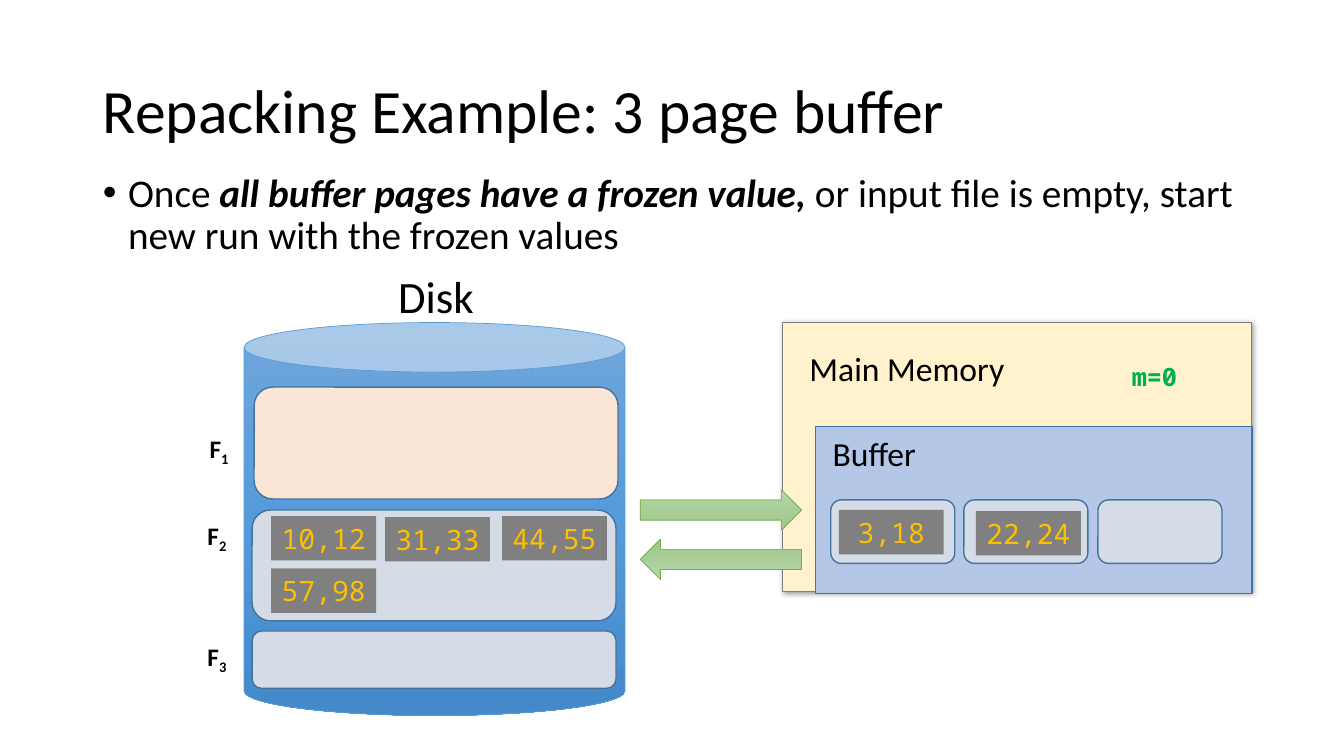
import pptx
import pptx.dml.color
import pptx.enum.shapes
import pptx.enum.text
import pptx.oxml
import pptx.oxml.ns
import pptx.util
from lxml import etree

SHAPE = pptx.enum.shapes.MSO_SHAPE
ALIGN = pptx.enum.text.PP_ALIGN
ANCHOR = pptx.enum.text.MSO_ANCHOR
qn = pptx.oxml.ns.qn


class Deck:
    """Holds the slide style and draws each kind of element in px (100 to the inch)."""

    PX = 9144
    TEXT, MONO = "Calibri", "Noto Sans Mono"
    COLORS = {
        "text": "000000", "page": "D6DCE5", "output": "FBE5D6",
        "edge": "43739E", "memory": "FFF2CC", "memory_edge": "808080",
        "buffer": "B4C7E7", "tile": "808080", "value": "FFC000",
        "counter": "00B050", "disk_edge": "5B9BD5", "arrow_edge": "70AD47",
    }
    DISK = ("71A6DB", "559BDB", "448ACA")
    ARROW = ("B5D5A7", "AACE9A", "9CC987")

    def __init__(self, width, height):
        self.prs = pptx.Presentation()
        self.prs.slide_width, self.prs.slide_height = width * self.PX, height * self.PX
        self.slide = self.prs.slides.add_slide(self.prs.slide_layouts[1])

    def color(self, name):
        return pptx.dml.color.RGBColor.from_string(self.COLORS[name])

    def box(self, *lengths):
        return [n * self.PX for n in lengths]

    def run(self, p, text, size, font=TEXT, color="text", bold=False, italic=False, sub=False):
        r = p.add_run()
        r.text = text
        r.font.size, r.font.name = pptx.util.Pt(size), font
        r.font.bold, r.font.italic = bold, italic
        r.font.color.rgb = self.color(color)
        if sub:
            r._r.get_or_add_rPr().set("baseline", "-25000")

    def placeholder(self, index, at, anchor):
        sp = self.slide.placeholders[index]
        sp.left, sp.top, sp.width, sp.height = self.box(*at)
        tf = sp.text_frame
        tf.auto_size = pptx.enum.text.MSO_AUTO_SIZE.NONE
        tf.vertical_anchor = anchor
        p = tf.paragraphs[0]
        p.alignment, p.line_spacing = ALIGN.LEFT, 0.9
        return p

    def title(self, text, *at):
        self.run(self.placeholder(0, at, ANCHOR.MIDDLE), text, 44)

    def bullet(self, parts, *at):
        p = self.placeholder(1, at, ANCHOR.TOP)
        p.space_before = pptx.util.Pt(10)
        pPr = p._p.get_or_add_pPr()
        pPr.set("marL", "228600")
        pPr.set("indent", "-228600")
        etree.SubElement(pPr, qn("a:buFont")).set("typeface", "Arial")
        etree.SubElement(pPr, qn("a:buChar")).set("char", "•")
        for text, strong in parts:
            self.run(p, text, 28, bold=strong, italic=strong)

    def shape(self, kind, at, fill=None, line=None, width=1):
        sp = self.slide.shapes.add_shape(kind, *self.box(*at))
        sp.shadow.inherit = False
        if fill:
            sp.fill.solid()
            sp.fill.fore_color.rgb = self.color(fill)
        if line:
            sp.line.color.rgb = self.color(line)
            sp.line.width = pptx.util.Pt(width)
        else:
            sp.line.fill.background()
        return sp

    def page(self, *at, fill="page"):
        self.shape(SHAPE.ROUNDED_RECTANGLE, at, fill, "edge")

    def gradient(self, sp, colors):
        sp.fill.gradient()
        sp.fill.gradient_angle = 270
        stops = sp._element.spPr.find(".//" + qn("a:gsLst"))
        for stop in list(stops):
            stops.remove(stop)
        for pos, value in zip((0, 50000, 100000), colors):
            stop = etree.SubElement(stops, qn("a:gs"), pos=str(pos))
            etree.SubElement(stop, qn("a:srgbClr"), val=value)

    def disk(self, *at):
        sp = self.shape(SHAPE.CAN, at, line="disk_edge", width=0.5)
        sp.adjustments[0] = 0.13
        self.gradient(sp, self.DISK)

    def arrow(self, *at, rotation=0):
        sp = self.shape(SHAPE.RIGHT_ARROW, at, line="arrow_edge", width=0.5)
        sp.rotation = rotation
        self.gradient(sp, self.ARROW)

    def memory(self, *at):
        sp = self.shape(SHAPE.RECTANGLE, at, "memory", "memory_edge", 0.5)
        effects = sp._element.spPr.find(qn("a:effectLst"))
        shadow = etree.SubElement(effects, qn("a:outerShdw"), blurRad="50800",
                                  dist="12700", dir="2700000", rotWithShape="0")
        shade = etree.SubElement(shadow, qn("a:srgbClr"), val="000000")
        etree.SubElement(shade, qn("a:alpha"), val="40000")

    def label(self, text, size, *at, align=ALIGN.LEFT, bold=False, sub=""):
        tf = self.slide.shapes.add_textbox(*self.box(*at)).text_frame
        tf.word_wrap = False
        p = tf.paragraphs[0]
        p.alignment = align
        self.run(p, text, size, bold=bold)
        if sub:
            self.run(p, sub, size, bold=bold, sub=True)

    def tile(self, text, *at, size=20, fill="tile", color="value", bold=False):
        tf = self.shape(SHAPE.RECTANGLE, at, fill).text_frame
        tf.word_wrap = False
        tf.vertical_anchor = ANCHOR.MIDDLE
        p = tf.paragraphs[0]
        p.alignment = ALIGN.CENTER
        self.run(p, text, size, self.MONO, color, bold)


def main():
    deck = Deck(1333, 750)
    deck.title("Repacking Example: 3 page buffer", 92, 40, 1150, 145)
    deck.bullet([("Once ", False), ("all buffer pages have a frozen value, ", True),
                 ("or input file is empty, start new run with the frozen values", False)],
                92, 167, 1150, 509)

    deck.disk(242, 320, 378, 390)
    deck.label("Disk", 32, 384, 262, 97, 64, align=ALIGN.CENTER)
    deck.page(252, 384, 361, 111, fill="output")
    for top, height in ((506, 110), (626, 57)):
        deck.page(250, top, 361, height)
    for number, left, top in (("1", 198, 425), ("2", 196, 511), ("3", 196, 631)):
        deck.label("F", 18, left, top, 40, 40, bold=True, sub=number)

    deck.memory(776, 320, 465, 267)
    deck.shape(SHAPE.RECTANGLE, (809, 423, 433, 166), "buffer", "edge")
    deck.label("Main Memory", 24, 793, 340, 215, 50)
    deck.label("Buffer", 24, 816, 425, 104, 50)
    for i in range(3):
        deck.page(824 + round(132.5 * i), 496, 123, 63)

    deck.arrow(635, 486, 160, 40)
    deck.arrow(635, 535, 160, 40, rotation=180)

    for text, left, top in (("10,12", 269, 512), ("31,33", 382, 513), ("44,55", 498, 512),
                            ("57,98", 269, 564), ("3,18", 832, 506), ("22,24", 968, 507)):
        deck.tile(text, left, top, 104, 44)
    deck.tile("m=0", 1112, 353, 66, 40, size=18, fill="memory", color="counter", bold=True)

    deck.prs.save("out.pptx")


if __name__ == "__main__":
    main()
